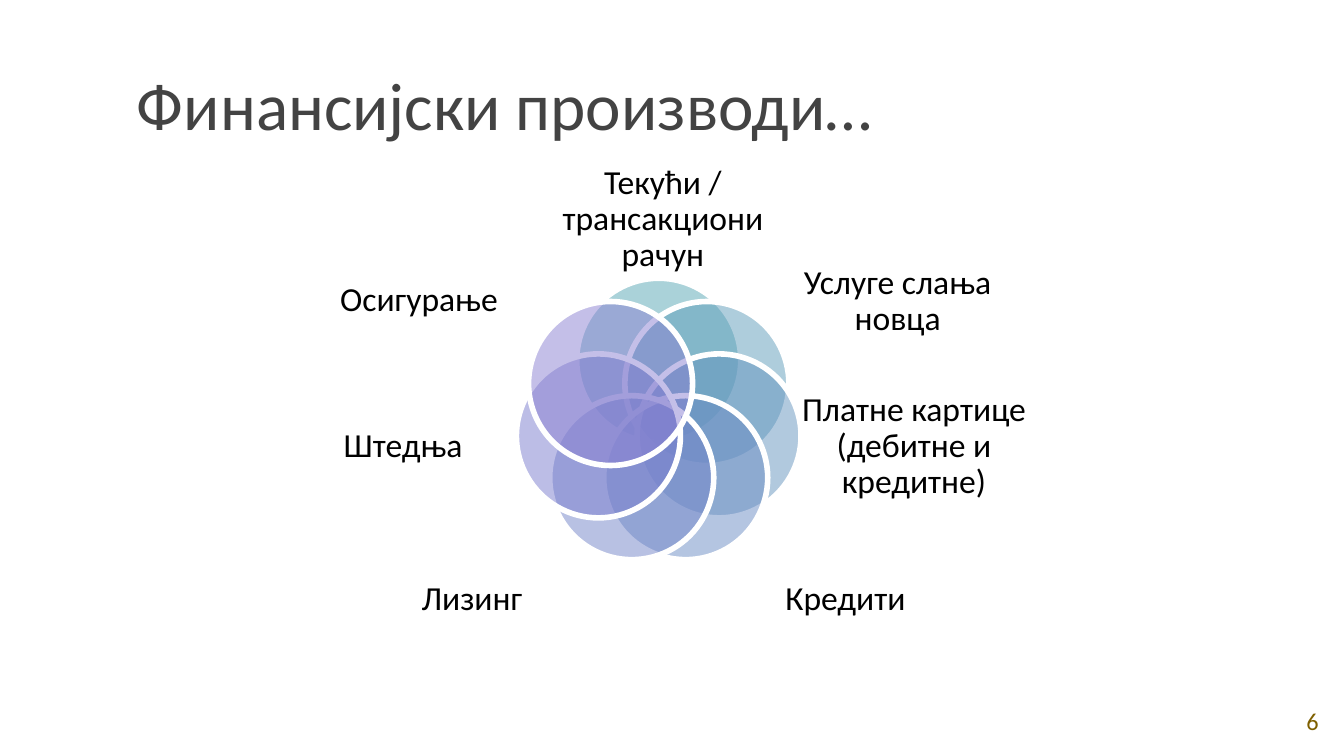
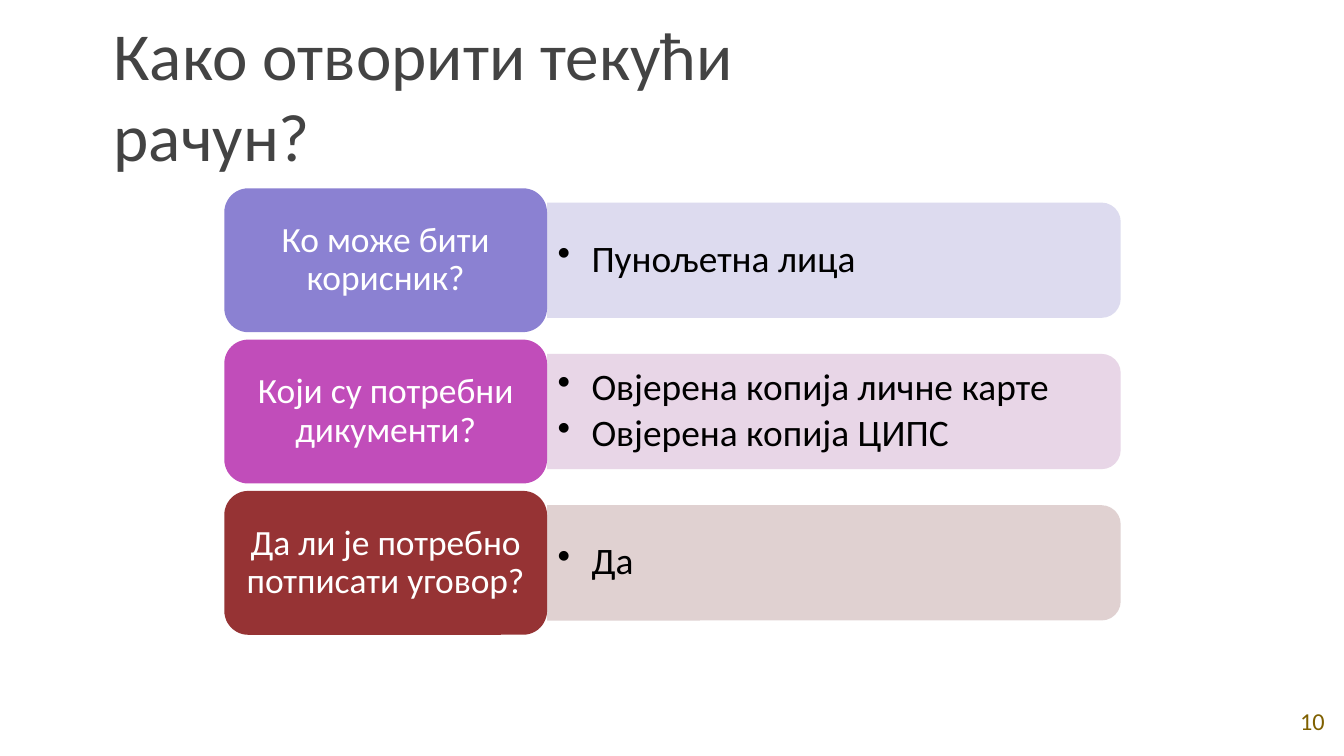
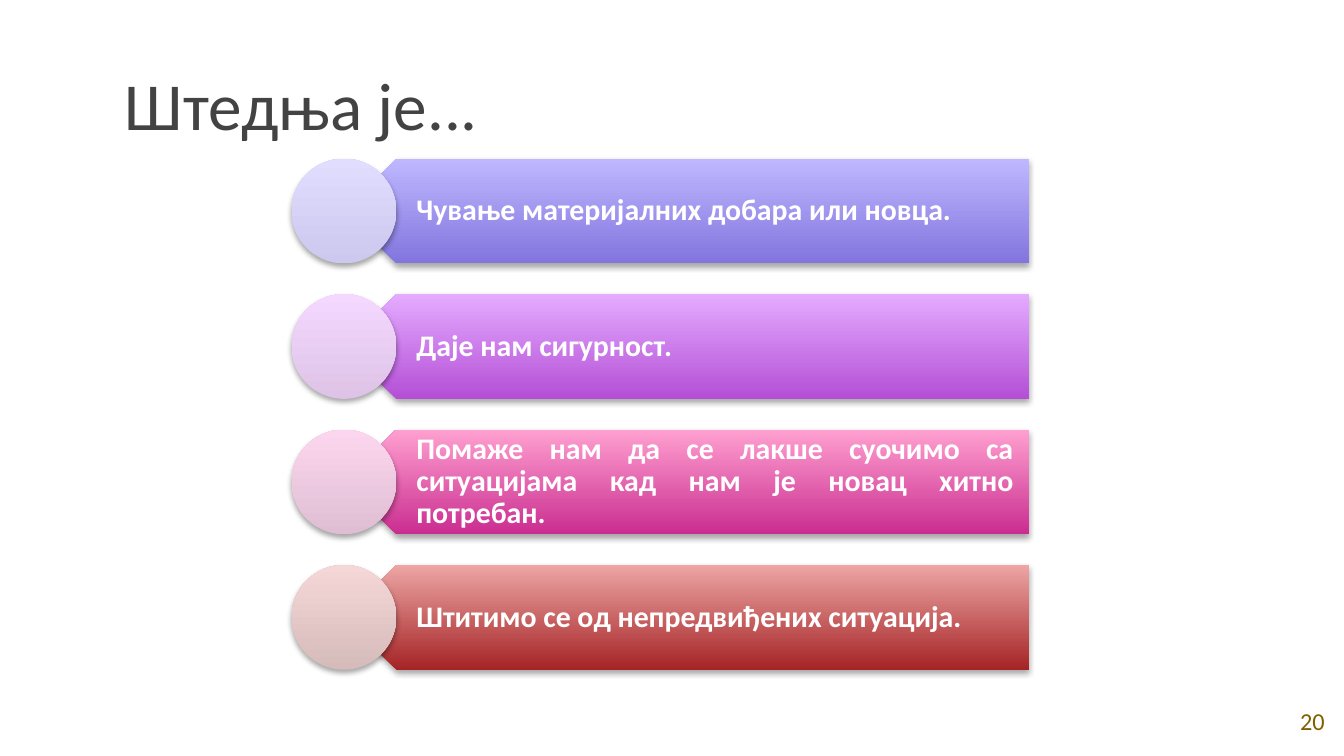
import math

import lxml.etree
import pptx
import pptx.dml.color
import pptx.enum.shapes
import pptx.enum.text
import pptx.oxml.ns
import pptx.util

Cm = pptx.util.Cm
Pt = pptx.util.Pt
RGBColor = pptx.dml.color.RGBColor
Shape = pptx.enum.shapes.MSO_SHAPE
Align = pptx.enum.text.PP_ALIGN
Anchor = pptx.enum.text.MSO_ANCHOR
qn = pptx.oxml.ns.qn

FONT = "Calibri"
WHITE = RGBColor(0xFF, 0xFF, 0xFF)
BLACK = RGBColor(0x00, 0x00, 0x00)
TITLE_GREY = RGBColor(0x43, 0x43, 0x43)
NUMBER_GOLD = RGBColor(0x7F, 0x60, 0x00)
TEAL = RGBColor(0x57, 0xA7, 0xB5)
AQUA = RGBColor(0x5E, 0x9D, 0xBA)
SKY = RGBColor(0x64, 0x94, 0xBF)
BLUE = RGBColor(0x6B, 0x8C, 0xC4)
INDIGO = RGBColor(0x72, 0x84, 0xC9)
IRIS = RGBColor(0x7A, 0x7D, 0xCE)
VIOLET = RGBColor(0x8B, 0x81, 0xD2)
MAGENTA = RGBColor(0xC1, 0x4D, 0xBA)
BRICK = RGBColor(0x96, 0x33, 0x34)
PALE_VIOLET = RGBColor(0xDA, 0xD8, 0xEE)
PALE_MAGENTA = RGBColor(0xE6, 0xD2, 0xE5)
PALE_BRICK = RGBColor(0xDD, 0xCD, 0xCD)
VIOLET_BLEND = (RGBColor(0x82, 0x75, 0xDE), RGBColor(0xBF, 0xB8, 0xFF))
PURPLE_BLEND = (RGBColor(0xB4, 0x4F, 0xD6), RGBColor(0xE4, 0xAB, 0xFF))
PINK_BLEND = (RGBColor(0xCA, 0x2D, 0x90), RGBColor(0xFF, 0xA0, 0xD0))
RED_BLEND = (RGBColor(0xA5, 0x24, 0x25), RGBColor(0xED, 0xA5, 0xA5))
PALE_VIOLET_BLEND = (RGBColor(0xCC, 0xC8, 0xEE), RGBColor(0xE1, 0xDD, 0xFF))
PALE_PURPLE_BLEND = (RGBColor(0xDE, 0xC3, 0xE7), RGBColor(0xF4, 0xD8, 0xFF))
PALE_PINK_BLEND = (RGBColor(0xDF, 0xBE, 0xD3), RGBColor(0xFC, 0xD6, 0xEE))
PALE_RED_BLEND = (RGBColor(0xD6, 0xBB, 0xBB), RGBColor(0xF5, 0xD7, 0xD7))

PRODUCTS = [
    ("Текући / трансакциони рачун", TEAL, (10.36, 3.33, 4.34, 1.65)),
    ("Услуге слања новца", AQUA, (14.91, 4.9, 4.11, 1.6)),
    ("Платне картице (дебитне и кредитне)", SKY, (14.66, 7.32, 5.23, 2.24)),
    ("Кредити", BLUE, (14.2, 10.31, 3.56, 2.06)),
    ("Лизинг", INDIGO, (7.14, 10.31, 3.56, 2.06)),
    ("Штедња", IRIS, (5.97, 7.32, 3.3, 2.24)),
    ("Oсигурање", VIOLET, (5.94, 4.65, 3.96, 2.08)),
]
QUESTIONS = [
    ("Ко може бити корисник?", ["Пунољетна лица"], VIOLET, PALE_VIOLET),
    ("Који су потребни дикументи?",
     ["Овјерена копија личне карте", "Овјерена копија ЦИПС"], MAGENTA, PALE_MAGENTA),
    ("Да ли је потребно потписати уговор?", ["Да"], BRICK, PALE_BRICK),
]
BENEFITS = [
    ("Чување материјалних добара или новца.", VIOLET_BLEND, PALE_VIOLET_BLEND),
    ("Даје нам сигурност.", PURPLE_BLEND, PALE_PURPLE_BLEND),
    ("Помаже нам да се лакше суочимо са ситуацијама кад нам је новац хитно потребан.",
     PINK_BLEND, PALE_PINK_BLEND),
    ("Штитимо се од непредвиђених ситуација.", RED_BLEND, PALE_RED_BLEND),
]


def set_frame(box, margins, anchor=Anchor.MIDDLE):
    """Wrap the text of a box and set its left, top, right and bottom margins."""
    frame = box.text_frame
    frame.word_wrap = True
    frame.vertical_anchor = anchor
    left, top, right, bottom = margins
    frame.margin_left, frame.margin_top = Cm(left), Cm(top)
    frame.margin_right, frame.margin_bottom = Cm(right), Cm(bottom)


def write(box, lines, size, color, align=Align.CENTER, bold=False, after=0.35,
          spacing=0.9, bullet=False):
    """Write each line as a paragraph with one formatted run."""
    for index, line in enumerate(lines):
        frame = box.text_frame
        para = frame.add_paragraph() if index else frame.paragraphs[0]
        if bullet:
            add_bullet(para)
        para.alignment = align
        para.line_spacing = spacing
        para.space_after = Pt(round(size * after, 1))
        span = para.add_run()
        span.text = line
        span.font.name = FONT
        span.font.size = Pt(size)
        span.font.bold = bold
        span.font.color.rgb = color


def add_bullet(para):
    """Give a paragraph a round bullet with a hanging indent."""
    properties = para._p.get_or_add_pPr()
    properties.set("marL", str(Cm(0.64)))
    properties.set("indent", str(-Cm(0.64)))
    lxml.etree.SubElement(properties, qn("a:buChar")).set("char", "•")


def add_text(page, place, lines, size, color, margins=(0, 0, 0, 0),
             anchor=Anchor.MIDDLE, **style):
    """Add a text box at left, top, width and height in centimetres."""
    box = page.shapes.add_textbox(*map(Cm, place))
    set_frame(box, margins, anchor)
    write(box, lines, size, color, **style)


def add_plain_shape(page, kind, place):
    """Add a preset shape without outline or shadow."""
    shape = page.shapes.add_shape(kind, *map(Cm, place))
    shape.shadow.inherit = False
    shape.line.fill.background()
    return shape


def add_solid_shape(page, kind, place, color, opacity=100):
    """Add a preset shape with one fill colour of the given opacity in percent."""
    shape = add_plain_shape(page, kind, place)
    shape.fill.solid()
    shape.fill.fore_color.rgb = color
    if opacity < 100:
        tint = shape._element.spPr.find(qn("a:solidFill"))[0]
        lxml.etree.SubElement(tint, qn("a:alpha")).set("val", str(opacity * 1000))
    return shape


def add_blended_shape(page, kind, place, blend):
    """Add a shape blended from bottom to top, with a soft shadow below."""
    shape = add_plain_shape(page, kind, place)
    shape.fill.gradient()
    shape.fill.gradient_angle = 90
    for stop, color in zip(shape.fill.gradient_stops, blend):
        stop.color.rgb = color
    properties = shape._element.spPr
    properties.find(qn("a:gradFill")).set("rotWithShape", "0")
    shadow = lxml.etree.SubElement(
        properties.find(qn("a:effectLst")), qn("a:outerShdw"),
        blurRad=str(Pt(3.1)), dist=str(Pt(1.8)), dir="5400000", rotWithShape="0")
    tint = lxml.etree.SubElement(shadow, qn("a:srgbClr"), val=str(BLACK))
    lxml.etree.SubElement(tint, qn("a:alpha"), val="35000")
    return shape


def add_page(deck, title, left, top, number):
    """Add a blank page with its title and page number."""
    page = deck.slides.add_slide(deck.slide_layouts[6])
    margins = (0.25, 0.25, 0.25, 0.25)
    add_text(page, (left, top, 15.62, 2.39), [title], 36, TITLE_GREY, margins,
             Anchor.BOTTOM, align=Align.LEFT, after=0, spacing=1)
    add_text(page, (24.21, 12.98, 1.19, 1.3), [number], 13, NUMBER_GOLD, margins,
             after=0, spacing=1)
    return page


def add_product_ring(page):
    """Draw overlapping circles evenly around a ring, each with its label."""
    center_x, center_y, radius, size = 12.45, 7.98, 1.17, 3.1
    for index, (label, color, place) in enumerate(PRODUCTS):
        angle = math.tau * index / len(PRODUCTS)
        left = round(center_x + radius * math.sin(angle) - size / 2, 2)
        top = round(center_y - radius * math.cos(angle) - size / 2, 2)
        circle = add_solid_shape(page, Shape.OVAL, (left, top, size, size), color, 50)
        circle.line.color.rgb = WHITE
        circle.line.width = Pt(3)
        add_text(page, place, [label], 18, BLACK)


def add_question_rows(page):
    """Draw one row per question: a label and a bar with the answers."""
    margins = (0.2, 0.1, 0.2, 0.1)
    left, width, height = 4.24, 6.1, 2.72
    bar_left, bar_length, bar_height = left + width, 10.84, 2.18
    for index, (question, answers, color, pale) in enumerate(QUESTIONS):
        top = 3.56 + index * 2.86
        middle = top + height / 2
        bar = add_solid_shape(
            page, Shape.ROUND_2_SAME_RECTANGLE,
            (bar_left + (bar_length - bar_height) / 2, middle - bar_length / 2,
             bar_height, bar_length), pale, 90)
        bar.rotation = 90
        add_text(page, (bar_left, middle - 0.99, 10.72, 1.98), answers, 20, BLACK,
                 margins, align=Align.LEFT, after=0.15, bullet=True)
        label = add_solid_shape(page, Shape.ROUNDED_RECTANGLE,
                                (left, top, width, height), color)
        set_frame(label, margins)
        write(label, [question], 19, WHITE)


def add_benefit_rows(page):
    """Draw one row per benefit: a plate pointing left behind a disc."""
    height = 1.98
    for index, (benefit, blend, pale_blend) in enumerate(BENEFITS):
        top = 3 + index * 2.56
        plate = add_blended_shape(page, Shape.PENTAGON, (6.5, top, 12.95, height), blend)
        plate.rotation = 180
        add_text(page, (7.01, top, 12.45, height), [benefit], 16, WHITE,
                 (0.86, 0.18, 0.3, 0.18), align=Align.JUSTIFY, bold=True)
        add_blended_shape(page, Shape.OVAL, (5.51, top, height, height), pale_blend)


def main():
    """Build the three pages and save the deck."""
    deck = pptx.Presentation()
    deck.slide_width, deck.slide_height = Cm(25.4), Cm(14.29)
    add_product_ring(add_page(deck, "Финансијски производи…", 2.34, 0.58, "6"))
    add_question_rows(add_page(deck, "Како отворити текући рачун?", 1.9, 1.17, "10"))
    add_benefit_rows(add_page(deck, "Штедња је...", 2.11, 0.58, "20"))
    deck.save("out.pptx")


if __name__ == "__main__":
    main()
